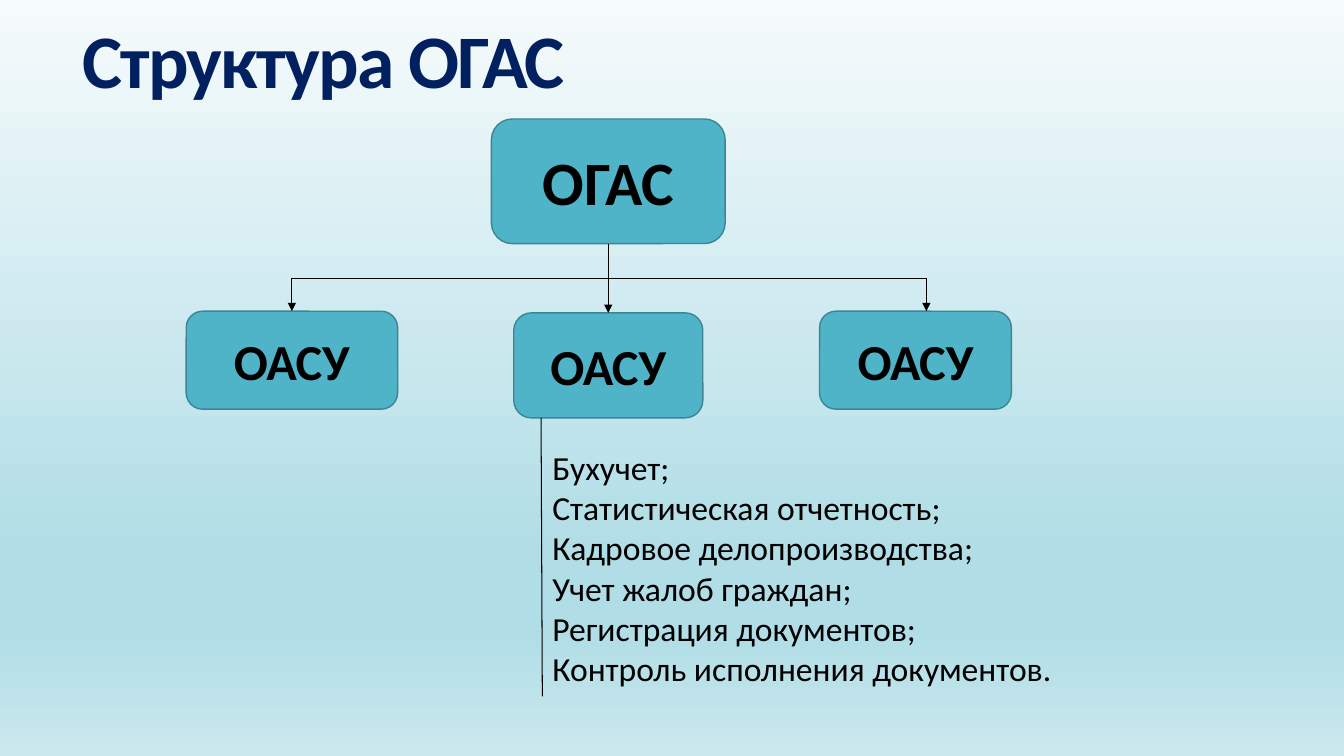
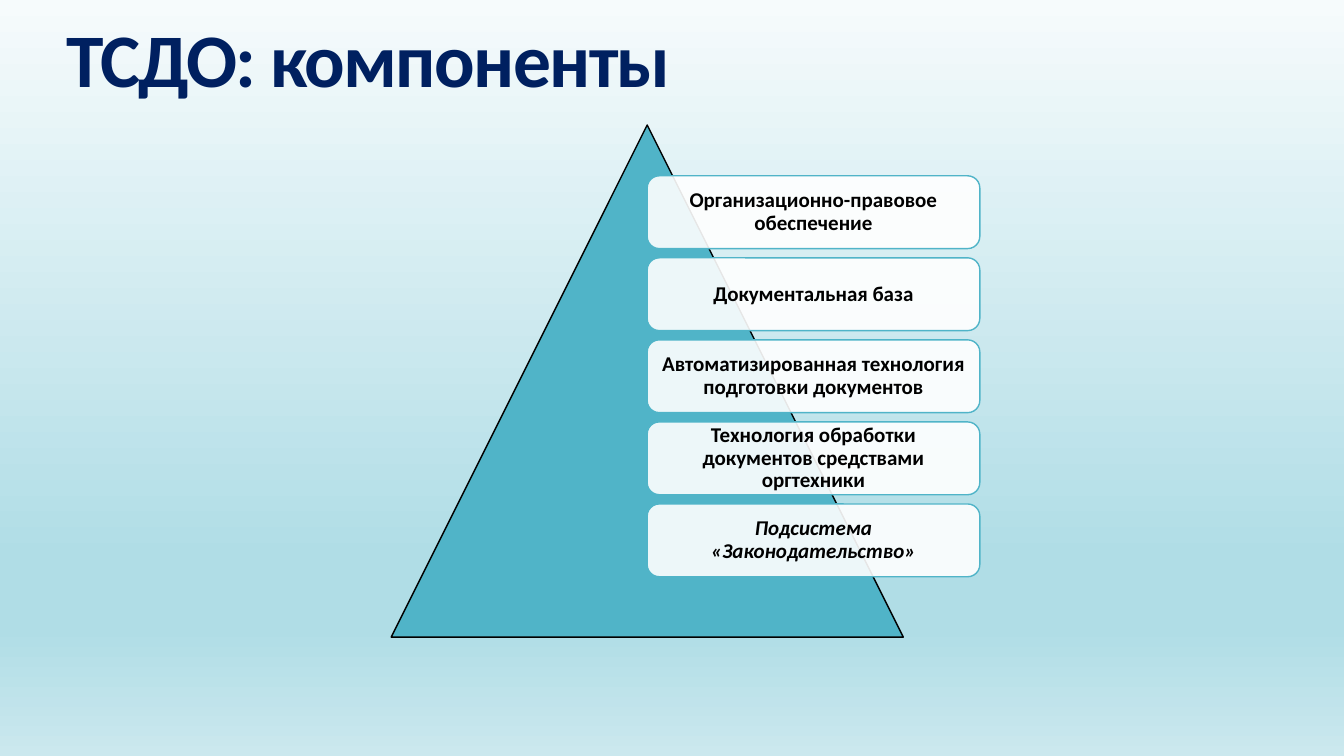
from typing import NamedTuple, Optional

import pptx
import pptx.dml.color
import pptx.enum.shapes
import pptx.enum.text
import pptx.oxml.ns
import pptx.util
from lxml import etree

Pt = pptx.util.Pt
qn = pptx.oxml.ns.qn
SHAPE = pptx.enum.shapes.MSO_SHAPE
MIDDLE = pptx.enum.text.MSO_ANCHOR.MIDDLE

FONT = "Calibri"
COLORS = {
    "title": "002060",
    "text": "000000",
    "teal": "50B4C8",
    "teal_edge": "3B8594",
    "card": "FFFFFF",
}
BACKGROUND = [(0, "F6FBFC"), (74, "B0DDE6"), (83, "B0DDE6"), (100, "CBE8EE")]


class Frame(NamedTuple):
    left: float
    top: float
    width: float
    height: float


class Node(NamedTuple):
    label: str
    frame: Frame
    size: float


class Component(NamedTuple):
    label: str
    italic: bool = False


class Branch(NamedTuple):
    x: float
    unit: Node
    joined: bool


# Content: structure of the system
ROOT = Node("ОГАС", Frame(351, 85, 167, 89), 44)
BUS_Y = 198.7
BRANCHES = [
    Branch(208.5, Node("ОАСУ", Frame(133, 222.3, 151, 70), 36), True),
    Branch(434.5, Node("ОАСУ", Frame(367, 223.5, 135, 75), 36), True),
    Branch(661.7, Node("ОАСУ", Frame(585.4, 222.3, 137, 70), 36), False),
]
TASKS = [
    "Бухучет;",
    "Статистическая отчетность;",
    "Кадровое делопроизводства;",
    "Учет жалоб граждан;",
    "Регистрация документов;",
    "Контроль исполнения документов.",
]

# Content: components
COMPONENTS = [
    Component("Организационно-правовое обеспечение"),
    Component("Документальная база"),
    Component("Автоматизированная технология подготовки документов"),
    Component("Технология обработки документов средствами оргтехники"),
    Component("Подсистема «Законодательство»", italic=True),
]
FIRST_CARD = Frame(462.3, 125.6, 237.6, 52)
CARD_PITCH = 58.6


def rgb(name: str) -> pptx.dml.color.RGBColor:
    return pptx.dml.color.RGBColor.from_string(COLORS[name])


def style(paragraph, size: float, color: str = "text", bold: bool = False, italic: bool = False) -> None:
    font = paragraph.font
    font.name, font.size, font.bold, font.italic = FONT, Pt(size), bold, italic
    font.color.rgb = rgb(color)


def set_background(master) -> None:
    fill = master.background.fill
    fill.gradient()
    fill.gradient_angle = 270
    stops = master.element.find(".//" + qn("a:gsLst"))
    for stop in list(stops):
        stops.remove(stop)
    for position, color in BACKGROUND:
        stop = etree.SubElement(stops, qn("a:gs"), pos=str(position * 1000))
        etree.SubElement(stop, qn("a:srgbClr"), val=color)


def add_text_box(slide, frame: Frame):
    box = slide.shapes.add_textbox(*map(Pt, frame))
    box.text_frame.word_wrap = True
    return box


def add_title(slide, text: str, frame: Frame) -> None:
    title = add_text_box(slide, frame)
    title.text_frame.vertical_anchor = MIDDLE
    title.text_frame.text = text
    paragraph = title.text_frame.paragraphs[0]
    paragraph.line_spacing = 0.85
    style(paragraph, 54, "title", bold=True)
    for properties in title.element.iter(qn("a:defRPr")):
        properties.set("spc", "-120")


def add_panel(slide, kind, frame: Frame, fill: str, edge: str):
    panel = slide.shapes.add_shape(kind, *map(Pt, frame))
    panel.shadow.inherit = False
    panel.fill.solid()
    panel.fill.fore_color.rgb = rgb(fill)
    panel.line.color.rgb = rgb(edge)
    panel.line.width = Pt(1)
    return panel


def add_label(panel, text: str, size: float, italic: bool = False):
    frame = panel.text_frame
    frame.word_wrap = True
    frame.vertical_anchor = MIDDLE
    frame.text = text
    paragraph = frame.paragraphs[0]
    paragraph.alignment = pptx.enum.text.PP_ALIGN.CENTER
    style(paragraph, size, bold=True, italic=italic)
    return paragraph


def add_node(slide, node: Node):
    panel = add_panel(slide, SHAPE.ROUNDED_RECTANGLE, node.frame, "teal", "teal_edge")
    add_label(panel, node.label, node.size)
    return panel


def add_line(slide, x1: float, y1: float, x2: float, y2: float, arrow: bool = False,
             source: Optional[object] = None, target: Optional[object] = None) -> None:
    """Draw a line that leaves the bottom of source and enters the top of target."""
    line = slide.shapes.add_connector(
        pptx.enum.shapes.MSO_CONNECTOR.STRAIGHT, *map(Pt, (x1, y1, x2, y2)))
    if source is not None:
        line.begin_connect(source, 2)
    if target is not None:
        line.end_connect(target, 0)
    line.line.color.rgb = rgb("text")
    line.line.width = Pt(0.75)
    properties = line.element.spPr
    if arrow:
        etree.SubElement(properties.find(qn("a:ln")), qn("a:tailEnd"), type="triangle")
    etree.SubElement(properties, qn("a:effectLst"))


def add_card(slide, component: Component, frame: Frame) -> None:
    card = add_panel(slide, SHAPE.ROUNDED_RECTANGLE, frame, "card", "teal")
    color = card.element.spPr.find(qn("a:solidFill")).find(qn("a:srgbClr"))
    etree.SubElement(color, qn("a:alpha"), val="90000")
    text = card.text_frame
    text.margin_left = text.margin_right = Pt(4.5)
    text.margin_top = text.margin_bottom = Pt(4.5)
    add_label(card, component.label, 15, component.italic).line_spacing = 0.9


def build_structure(slide) -> None:
    add_title(slide, "Структура ОГАС", Frame(51.8, 9.4, 848, 75))

    # Root, bus and branches
    root = add_node(slide, ROOT)
    trunk_x = ROOT.frame.left + ROOT.frame.width / 2
    add_line(slide, trunk_x, ROOT.frame.top + ROOT.frame.height, trunk_x, BUS_Y, source=root)
    add_line(slide, BRANCHES[0].x, BUS_Y, BRANCHES[-1].x, BUS_Y)
    for branch in BRANCHES:
        unit = add_node(slide, branch.unit)
        add_line(slide, branch.x, BUS_Y, branch.x, branch.unit.frame.top, arrow=True,
                 target=unit if branch.joined else None)

    # Tasks of the middle unit
    add_line(slide, 386.5, 298.5, 387.4, 497.5)
    tasks = add_text_box(slide, Frame(387.4, 315.4, 414, 181.4)).text_frame
    tasks.auto_size = pptx.enum.text.MSO_AUTO_SIZE.SHAPE_TO_FIT_TEXT
    tasks.text = "\n".join(TASKS)
    for paragraph in tasks.paragraphs:
        style(paragraph, 24)


def build_components(slide) -> None:
    add_title(slide, "ТСДО: компоненты", Frame(40.3, 4.3, 860, 84))
    add_panel(slide, SHAPE.ISOSCELES_TRIANGLE, Frame(279.4, 89.3, 365.8, 365.8), "teal", "text")
    for index, component in enumerate(COMPONENTS):
        add_card(slide, component, FIRST_CARD._replace(top=FIRST_CARD.top + index * CARD_PITCH))


def main() -> None:
    deck = pptx.Presentation()
    deck.slide_width, deck.slide_height = Pt(960), Pt(540)
    set_background(deck.slide_master)
    blank = deck.slide_layouts[6]
    for build in (build_structure, build_components):
        build(deck.slides.add_slide(blank))
    deck.save("out.pptx")


if __name__ == "__main__":
    main()
